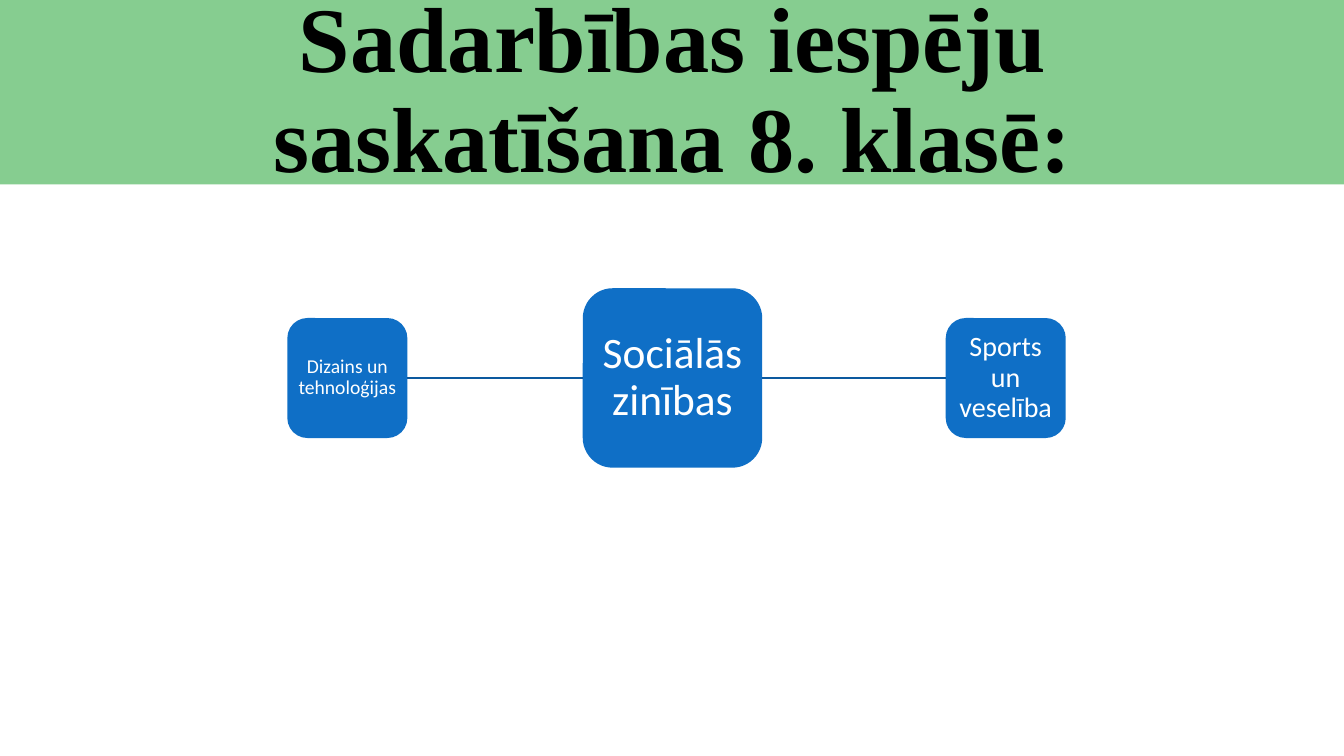
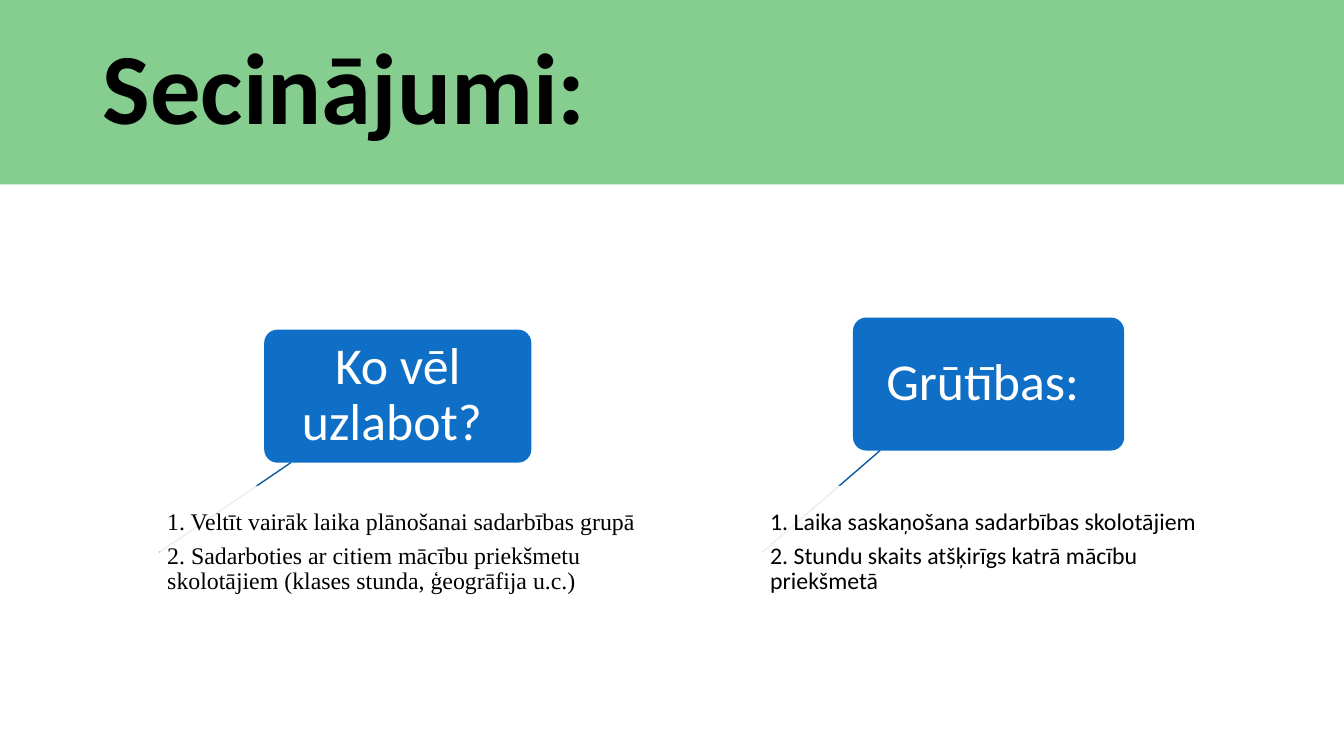
import pptx
import pptx.util
import pptx.dml.color
import pptx.enum.shapes
import pptx.enum.text
import pptx.oxml
import pptx.oxml.ns

PX = 9144
W, H = 1333, 750
GREEN, BLUE, LINE, WHITE, BLACK = "86CD90", "0F6FC6", "0C599F", "FFFFFF", "000000"
SANS, SERIF = "Calibri", "Times New Roman"
SHAPE = pptx.enum.shapes.MSO_SHAPE
ALIGN = pptx.enum.text.PP_ALIGN


def px(*values):
    return [pptx.util.Emu(round(v * PX)) for v in values]


def color(value):
    return pptx.dml.color.RGBColor.from_string(value)


def write(sp, lines, size, font=SANS, fill=WHITE, align=ALIGN.CENTER, bold=False, inset=(10, 5), gap=0):
    tf = sp.text_frame
    tf.word_wrap = True
    tf.vertical_anchor = pptx.enum.text.MSO_ANCHOR.MIDDLE
    tf.margin_left, tf.margin_top = px(*inset)
    tf.margin_right, tf.margin_bottom = px(*inset)
    for i, line in enumerate(lines):
        p = tf.paragraphs[0] if i == 0 else tf.add_paragraph()
        p.text = line
        p.alignment = align
        p.line_spacing = 0.9
        p.space_after = pptx.util.Pt(gap)
        p.font.size = pptx.util.Pt(size)
        p.font.name = font
        p.font.bold = bold
        p.font.color.rgb = color(fill)


def add_box(s, box, fill, kind=SHAPE.ROUNDED_RECTANGLE, radius=None, alpha=None):
    sp = s.shapes.add_shape(kind, *px(*box))
    sp.shadow.inherit = False
    sp.fill.solid()
    sp.fill.fore_color.rgb = color(fill)
    sp.line.fill.background()
    if radius is not None:
        sp.adjustments[0] = radius
    if alpha is not None:
        clr = sp.fill._xPr.find(".//" + pptx.oxml.ns.qn("a:srgbClr"))
        pptx.oxml.ns.qn("a:alpha")
        clr.append(pptx.oxml.parse_xml(
            f'<a:alpha {pptx.oxml.ns.nsdecls("a")} val="{alpha * 1000}"/>'))
    return sp


def add_line(s, x1, y1, x2, y2):
    line = s.shapes.add_connector(pptx.enum.shapes.MSO_CONNECTOR.STRAIGHT, *px(x1, y1, x2, y2))
    line.line.color.rgb = color(LINE)
    line.line.width = pptx.util.Pt(1)
    line._element.spPr.append(pptx.oxml.parse_xml(
        f'<a:effectLst {pptx.oxml.ns.nsdecls("a")}/>'))
    return line


def add_titled_slide(prs, title, size, font, align):
    s = prs.slides.add_slide(prs.slide_layouts[6])
    add_box(s, (0, 0, W, 183), GREEN, SHAPE.RECTANGLE)
    sp = s.shapes.add_textbox(*px(92, 15, 1150, 153))
    write(sp, [title], size, font, BLACK, align, bold=True)
    return s


def add_subject_map(s, box, center, left, right):
    x, y, w, h = box
    small = 119
    side_y = y + (h - small) / 2
    mid_y = y + h / 2
    hub = add_box(s, (x + 293, y, h, h), BLUE)
    write(hub, [center], 31, inset=(9, 9))
    sides = ((left, 14, 4, x, 1, 3), (right, 20, 6, x + w - small, 3, 1))
    for text, size, inset, side_x, hub_site, side_site in sides:
        side = add_box(s, (side_x, side_y, small, small), BLUE)
        write(side, [text], size, inset=(inset, inset))
        line = add_line(s, x, mid_y, x + w, mid_y)
        line.begin_connect(hub, hub_site)
        line.end_connect(side, side_site)


def add_conclusion(s, box, heading, heading_box, notes, font):
    x, y, w, h = box
    dx, dy, head_w = heading_box
    head_x, head_y = x + dx, y + dy
    head = add_box(s, (head_x, head_y, head_w, h), BLUE, radius=0.1)
    write(head, [heading], 37, inset=(8, 5))
    line = add_line(s, head_x + head_w / 10, head_y + h, x, y + h / 2)
    note = add_box(s, (x, y, w, h), WHITE, radius=0.1, alpha=90)
    write(note, notes, 17, font, BLACK, ALIGN.LEFT, inset=(4, 2), gap=6)
    line.end_connect(note, 1)


def main():
    prs = pptx.Presentation()
    prs.slide_width, prs.slide_height = px(W, H)

    s = add_titled_slide(prs, "Sadarbības iespēju saskatīšana 8. klasē:", 66, SERIF, ALIGN.CENTER)
    add_subject_map(s, (285, 286, 772, 178), "Sociālās zinības",
                    "Dizains un tehnoloģijas", "Sports un veselība")

    s = add_titled_slide(prs, "Secinājumi:", 72, SANS, ALIGN.LEFT)
    add_conclusion(s, (158, 482, 532, 132), "Ko vēl uzlabot? ", (104, -155, 265), [
        "1. Veltīt vairāk laika plānošanai sadarbības grupā",
        "2. Sadarboties ar citiem mācību priekšmetu skolotājiem (klases stunda, ģeogrāfija u.c.)",
    ], SERIF)
    add_conclusion(s, (756, 482, 442, 132), "Grūtības: ", (90, -167, 269), [
        "1. Laika saskaņošana sadarbības skolotājiem",
        "2. Stundu skaits atšķirīgs katrā mācību priekšmetā",
    ], SANS)

    prs.save("out.pptx")


if __name__ == "__main__":
    main()
